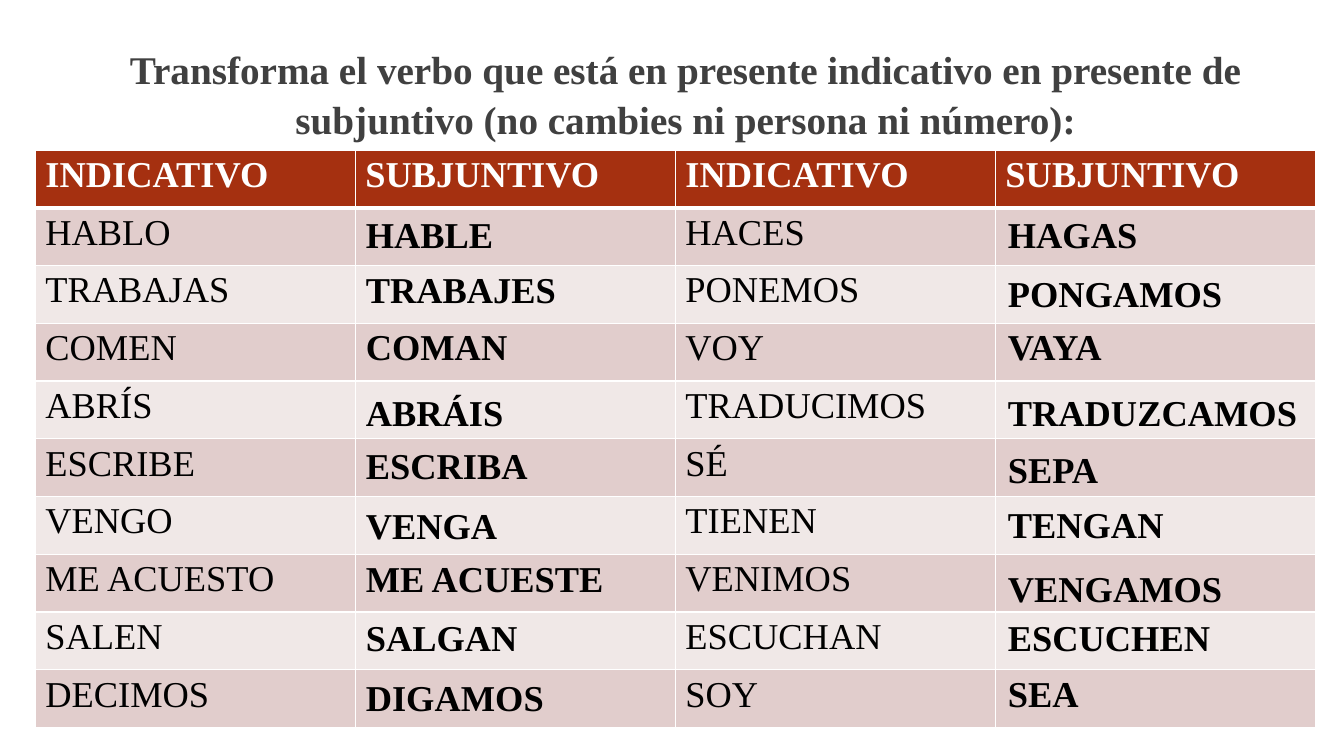
from lxml import etree
from pptx import Presentation
from pptx import util as u
from pptx.dml.color import RGBColor
from pptx.enum import text
from pptx.oxml import ns

HEADINGS = ["INDICATIVO", "SUBJUNTIVO"] * 2
LEFT_VERBS = ["HABLO", "TRABAJAS", "COMEN", "ABRÍS", "ESCRIBE",
              "VENGO", "ME ACUESTO", "SALEN", "DECIMOS"]
RIGHT_VERBS = ["HACES", "PONEMOS", "VOY", "TRADUCIMOS", "SÉ",
               "TIENEN", "VENIMOS", "ESCUCHAN", "SOY"]

# Left edge of each answer column, then each answer with its top, in cm
ANSWERS = {
    8.97: [("HABLE", 5.23), ("TRABAJES", 6.6), ("COMAN", 8.05),
           ("ABRÁIS", 9.7), ("ESCRIBA", 11.05), ("VENGA", 12.55),
           ("ME ACUESTE", 13.89), ("SALGAN", 15.37), ("DIGAMOS", 16.89)],
    25.15: [("HAGAS", 5.23), ("PONGAMOS", 6.71), ("VAYA", 8.05),
            ("TRADUZCAMOS", 9.7), ("SEPA", 11.15), ("TENGAN", 12.52),
            ("VENGAMOS", 14.15), ("ESCUCHEN", 15.37), ("SEA", 16.79)],
}


def color(value):
    return RGBColor.from_string(value)


class VerbSlide:
    font = "Times New Roman"
    white, black, gray = "FFFFFF", "000000", "404040"
    header = "A53010"
    bands = ("E1CDCC", "F0E8E7")
    size = 26

    def __init__(self, deck):
        self.page = deck.slides.add_slide(deck.slide_layouts[6])

    def style(self, para, size, ink, bold):
        para.font.name = self.font
        para.font.size = u.Pt(size)
        para.font.bold = bold
        para.font.color.rgb = color(ink)

    def text_box(self, words, left, top, width, height, size=size, ink=black):
        box = self.page.shapes.add_textbox(
            u.Cm(left), u.Cm(top), u.Cm(width), u.Cm(height))
        box.text_frame.word_wrap = True
        para = box.text_frame.paragraphs[0]
        para.text = words
        self.style(para, size, ink, True)
        return box

    def title(self, words):
        box = self.text_box(words, 1.4, 0.97, 31.75, 17.37, 28, self.gray)
        para = box.text_frame.paragraphs[0]
        para.alignment = text.PP_ALIGN.CENTER
        para.line_spacing = 1.05

    def answer(self, words, left, top):
        width = 8 if words == "TRADUZCAMOS" else 7.57
        box = self.text_box(words, left, top, width, 1.37)
        box.text_frame.auto_size = text.MSO_AUTO_SIZE.SHAPE_TO_FIT_TEXT

    def borders(self, cell, top, bottom):
        """Draw white cell edges, with top and bottom widths in points."""
        props = cell._tc.get_or_add_tcPr()
        widths = {"a:lnL": 1, "a:lnR": 1, "a:lnT": top, "a:lnB": bottom}
        for index, (tag, width) in enumerate(widths.items()):
            line = etree.Element(ns.qn(tag), w=str(u.Pt(width)))
            fill = etree.SubElement(line, ns.qn("a:solidFill"))
            etree.SubElement(fill, ns.qn("a:srgbClr"), val=self.white)
            props.insert(index, line)

    def table(self, rows):
        frame = self.page.shapes.add_table(
            len(rows), len(rows[0]),
            u.Cm(0.89), u.Cm(3.78), u.Cm(32.26), u.Cm(14.55))
        for r, row in enumerate(rows):
            is_header = r == 0
            for c, words in enumerate(row):
                cell = frame.table.cell(r, c)
                cell.fill.solid()
                cell.fill.fore_color.rgb = color(
                    self.header if is_header else self.bands[(r - 1) % 2])
                self.borders(cell, 3 if r == 1 else 1, 3 if is_header else 1)
                para = cell.text_frame.paragraphs[0]
                para.text = words
                self.style(para, self.size,
                           self.white if is_header else self.black, is_header)


def main():
    deck = Presentation()
    deck.slide_width, deck.slide_height = u.Cm(33.87), u.Cm(19.05)
    slide = VerbSlide(deck)
    slide.title("Transforma el verbo que está en presente indicativo en "
                "presente de subjuntivo (no cambies ni persona ni número):")
    slide.table([HEADINGS] + [[left, "", right, ""] for left, right
                              in zip(LEFT_VERBS, RIGHT_VERBS)])
    for left, answers in ANSWERS.items():
        for words, top in answers:
            slide.answer(words, left, top)
    deck.save("out.pptx")


if __name__ == "__main__":
    main()
